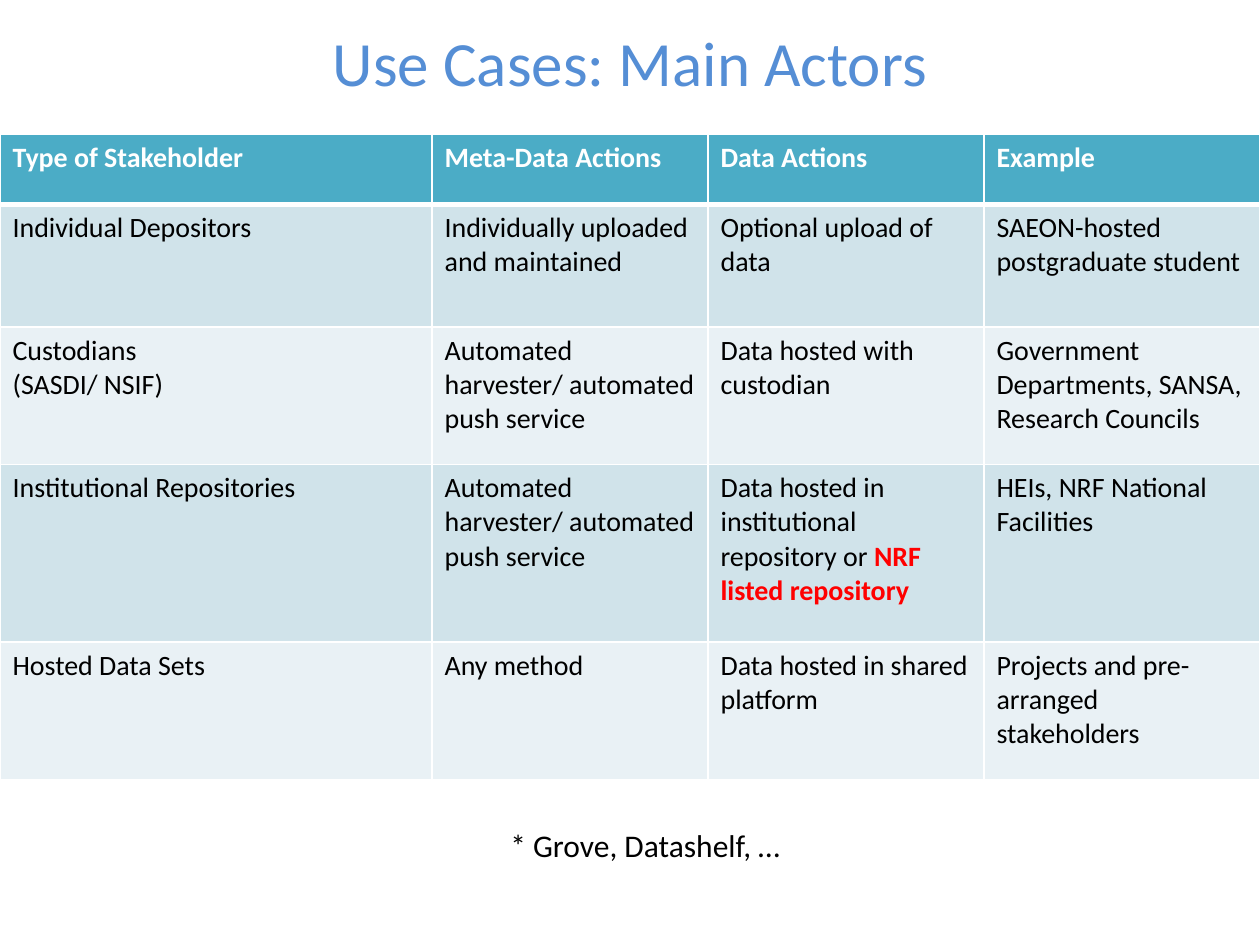
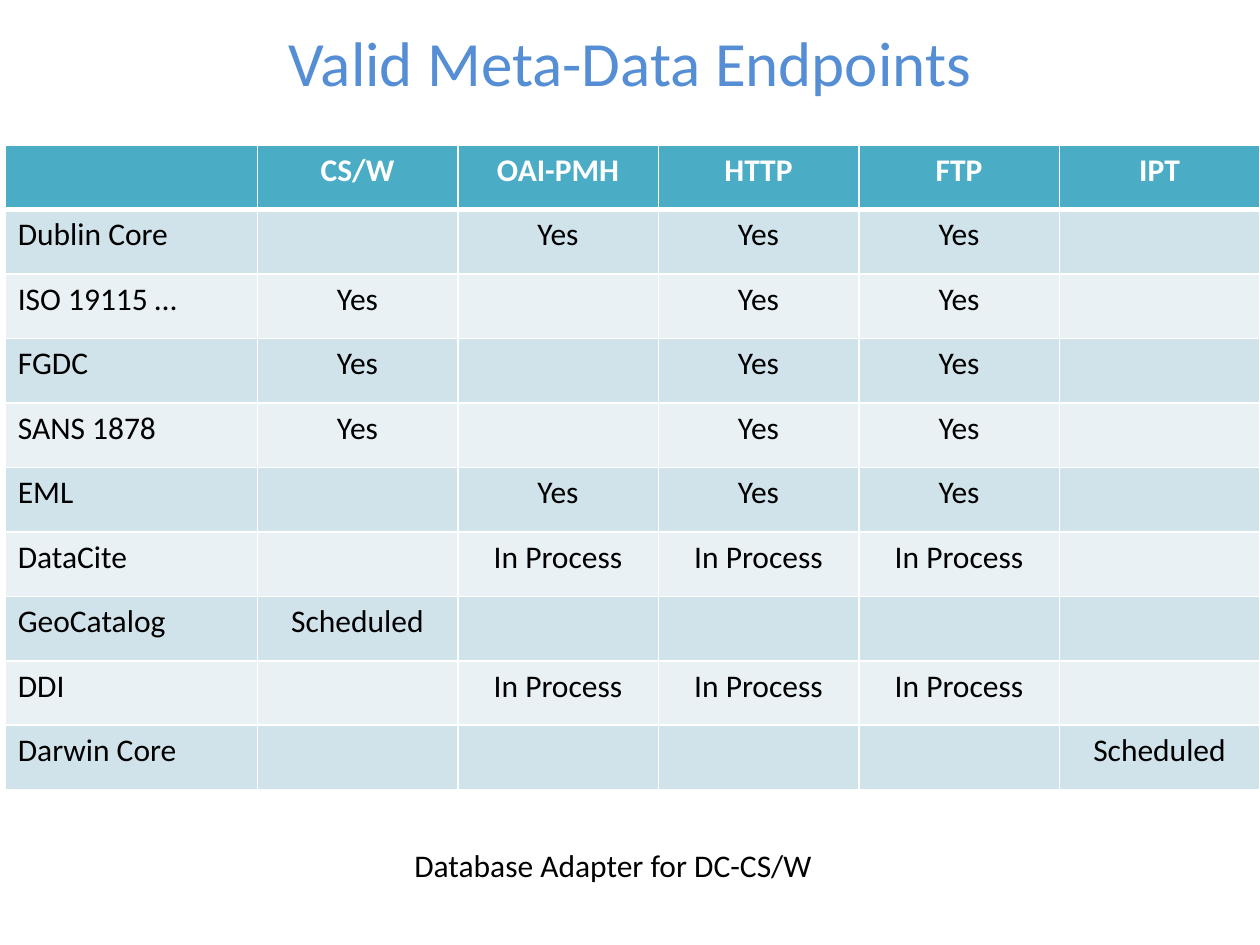
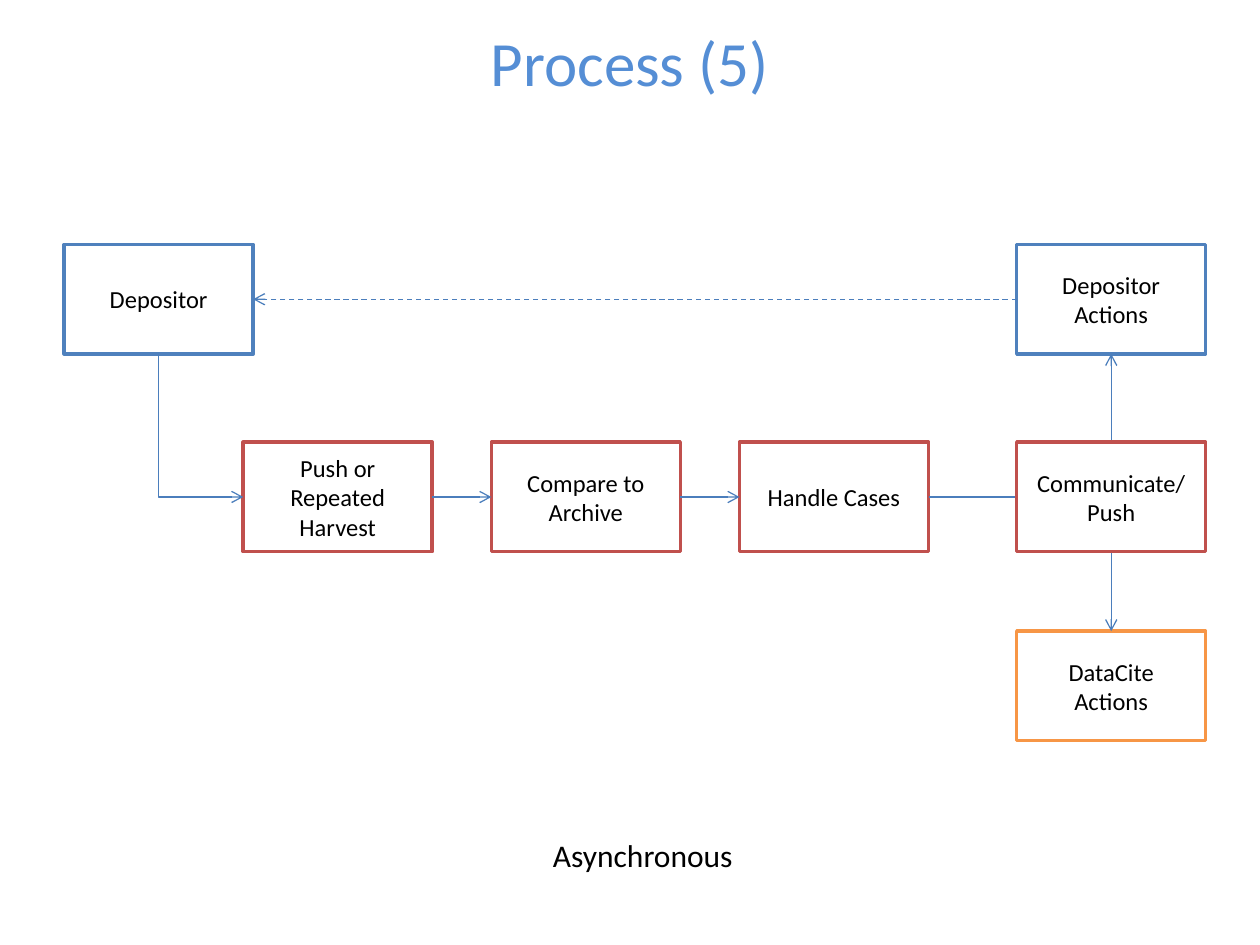
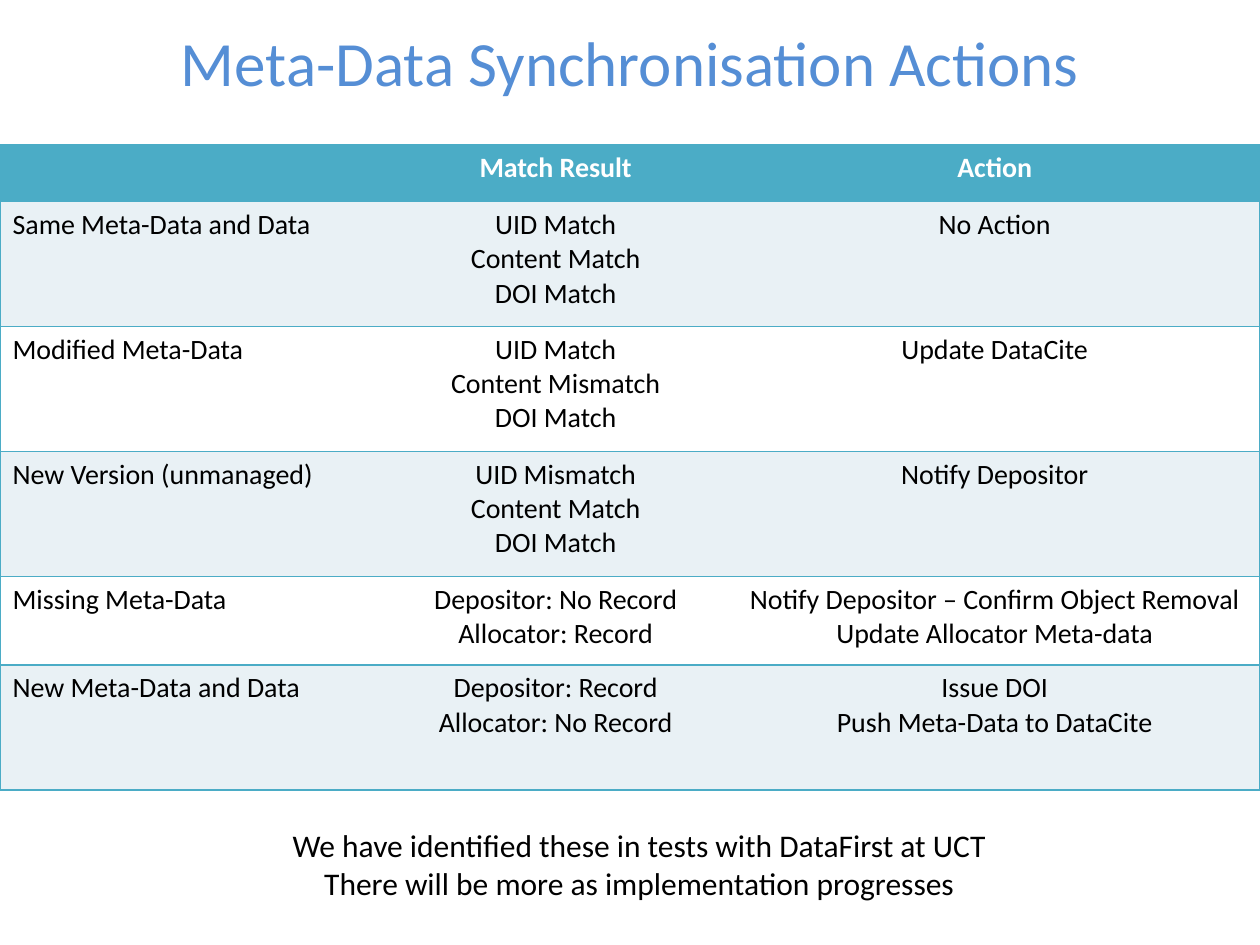
import pptx
import pptx.dml.color
import pptx.enum.dml
import pptx.enum.shapes
import pptx.enum.text
import pptx.oxml
import pptx.oxml.ns
import pptx.util

Pt = pptx.util.Pt
qn = pptx.oxml.ns.qn
ALIGN = pptx.enum.text.PP_ALIGN
FONT = "Calibri"
COLORS = {
    "title": "558ED5", "text": "000000", "white": "FFFFFF", "alert": "FF0000",
    "head": "4BACC6", "dark": "D0E3EA", "light": "E9F1F5",
    "blue": "4F81BD", "red": "C0504D", "orange": "F79646", "link": "4B7EBC",
}
BOX_W, BOX_H = 108, 62.6

ACTORS = [
    ["Type of Stakeholder", "Meta-Data Actions", "Data Actions", "Example"],
    ["Individual Depositors", "Individually uploaded and maintained",
     "Optional upload of data", "SAEON-hosted postgraduate student"],
    ["Custodians\n(SASDI/ NSIF)", "Automated harvester/ automated push service",
     "Data hosted with custodian",
     "Government Departments, SANSA, Research Councils"],
    ["Institutional Repositories", "Automated harvester/ automated push service",
     "Data hosted in institutional repository or |NRF listed repository|",
     "HEIs, NRF National Facilities"],
    ["Hosted Data Sets", "Any method", "Data hosted in shared platform",
     "Projects and pre-arranged stakeholders"],
]
YES, WIP, DUE = "Yes", "In Process", "Scheduled"
POINTS = [
    ["", "CS/W", "OAI-PMH", "HTTP", "FTP", "IPT"],
    ["Dublin Core", "", YES, YES, YES, ""],
    ["ISO 19115 …", YES, "", YES, YES, ""],
    ["FGDC", YES, "", YES, YES, ""],
    ["SANS 1878", YES, "", YES, YES, ""],
    ["EML", "", YES, YES, YES, ""],
    ["DataCite", "", WIP, WIP, WIP, ""],
    ["GeoCatalog", DUE, "", "", "", ""],
    ["DDI", "", WIP, WIP, WIP, ""],
    ["Darwin Core", "", "", "", "", DUE],
]
SYNC = [
    ["", "Match Result", "Action"],
    ["Same Meta-Data and Data", "UID Match\nContent Match\nDOI Match", "No Action"],
    ["Modified Meta-Data", "UID Match\nContent Mismatch\nDOI Match",
     "Update DataCite"],
    ["New Version (unmanaged)", "UID Mismatch\nContent Match\nDOI Match",
     "Notify Depositor"],
    ["Missing Meta-Data", "Depositor: No Record\nAllocator: Record",
     "Notify Depositor – Confirm Object Removal\nUpdate Allocator Meta-data"],
    ["New Meta-Data and Data", "Depositor: Record\nAllocator: No Record",
     "Issue DOI\nPush Meta-Data to DataCite"],
]


def rgb(name):
    """Return the named colour."""
    return pptx.dml.color.RGBColor.from_string(COLORS[name])


def write(frame, text, size, color="text", align=ALIGN.CENTER, bold=False):
    """Fill a frame, a paragraph per line, with |marked| parts in bold red."""
    for row, line in enumerate(text.split("\n")):
        para = frame.add_paragraph() if row else frame.paragraphs[0]
        para.alignment = align
        for pos, part in enumerate(line.split("|")):
            if part:
                run = para.add_run()
                run.text = part
                font = run.font
                font.name, font.size = FONT, Pt(size)
                font.bold = bold or pos % 2 == 1
                font.color.rgb = rgb("alert" if pos % 2 else color)


def add_text(slide, text, at, size=18, color="text", align=ALIGN.CENTER,
             wrap=True, fit=True):
    """Add a text box and return its frame."""
    frame = slide.shapes.add_textbox(*map(Pt, at)).text_frame
    frame.word_wrap = wrap
    if fit:
        frame.auto_size = pptx.enum.text.MSO_AUTO_SIZE.SHAPE_TO_FIT_TEXT
    write(frame, text, size, color, align)
    return frame


def add_page(deck, title):
    """Add a blank slide with the shared title."""
    slide = deck.slides.add_slide(deck.slide_layouts[6])
    frame = add_text(slide, title, (0, -0.7, 720, 72), 36, "title", fit=False)
    frame.vertical_anchor = pptx.enum.text.MSO_ANCHOR.MIDDLE
    return slide


def set_edges(cell, color, widths):
    """Draw the left, right, top and bottom edges; zero hides an edge."""
    props = cell._tc.get_or_add_tcPr()
    for pos, (side, width) in enumerate(zip("LRTB", widths)):
        line = props.makeelement(qn("a:ln" + side), {"w": str(Pt(width))})
        if width:
            fill = pptx.oxml.ns.qn("a:solidFill")
            tint = line.makeelement(qn("a:srgbClr"), {"val": COLORS[color]})
            solid = line.makeelement(fill, {})
            solid.append(tint)
            line.append(solid)
        else:
            line.append(line.makeelement(qn("a:noFill"), {}))
        props.insert(pos, line)


def add_grid(slide, data, at, cols, rows, size, bands, center=True, ruled=False):
    """Add a banded table, with a full grid or with ruled rows only."""
    shape = slide.shapes.add_table(len(rows), len(cols), *map(Pt, at),
                                   Pt(sum(cols)), Pt(sum(rows)))
    table = shape.table
    for col, width in zip(table.columns, cols):
        col.width = Pt(width)
    for row, height in zip(table.rows, rows):
        row.height = Pt(height)
    last = len(cols) - 1
    for r, line in enumerate(data):
        for c, text in enumerate(line):
            cell = table.cell(r, c)
            cell.fill.solid()
            cell.fill.fore_color.rgb = rgb(bands[(r - 1) % 2] if r else "head")
            align = ALIGN.CENTER if center and c else ALIGN.LEFT
            write(cell.text_frame, text, size, "text" if r else "white", align,
                  bold=not r)
            if ruled:
                set_edges(cell, "head", (int(c == 0), int(c == last), 1, 1))
            else:
                set_edges(cell, "white", (1, 1, 3 if r == 1 else 1, 1 if r else 3))


def add_box(slide, text, left, top, color):
    """Add an outlined step of the process."""
    kind = pptx.enum.shapes.MSO_SHAPE.RECTANGLE
    box = slide.shapes.add_shape(kind, *map(Pt, (left, top, BOX_W, BOX_H)))
    box.shadow.inherit = False
    box.fill.solid()
    box.fill.fore_color.rgb = rgb("white")
    box.line.color.rgb = rgb(color)
    box.line.width = Pt(2)
    box.text_frame.word_wrap = True
    box.text_frame.vertical_anchor = pptx.enum.text.MSO_ANCHOR.MIDDLE
    write(box.text_frame, text, 14)
    return box


def join(slide, start, out, end, into, dash=False):
    """Link two boxes by an elbow arrow, with one bend between crossing sides."""
    kind = pptx.enum.shapes.MSO_CONNECTOR.ELBOW
    link = slide.shapes.add_connector(kind, 0, 0, 0, 0)
    link.begin_connect(start, out)
    link.end_connect(end, into)
    link.line.color.rgb = rgb("link")
    link.line.width = Pt(0.75)
    if dash:
        link.line.dash_style = pptx.enum.dml.MSO_LINE.DASH
    props = link.element.spPr
    line = props.find(qn("a:ln"))
    line.append(line.makeelement(qn("a:tailEnd"), {"type": "arrow"}))
    props.append(props.makeelement(qn("a:effectLst"), {}))
    if out % 2 != into % 2:
        props.find(qn("a:prstGeom")).set("prst", "bentConnector2")
        if out == 2:
            turn(link, props.find(qn("a:xfrm")))


def turn(link, frame):
    """Make a one-bend link run down first and then right."""
    wide, high = link.width, link.height
    shift = (wide - high) // 2
    link.left, link.top = link.left + shift, link.top - shift
    link.width, link.height = high, wide
    frame.set("rot", "16200000")
    frame.set("flipH", "1")


def add_flow(slide):
    """Draw the process of boxes and arrows."""
    high, mid, low = 139.7, 252.7, 360.7
    first, right = 36.7, 581
    steps = ["Push or Repeated\nHarvest", "Compare to Archive", "Handle Cases"]
    push, check, handle = [add_box(slide, text, 139 + 141.8 * pos, mid, "red")
                           for pos, text in enumerate(steps)]
    acts = add_box(slide, "Depositor Actions", right, high, "blue")
    join(slide, handle, 3, acts, 2)
    join(slide, check, 3, handle, 1)
    join(slide, push, 3, check, 1)
    source = add_box(slide, "Depositor", first, high, "blue")
    join(slide, source, 2, push, 1)
    join(slide, acts, 1, source, 3, dash=True)
    cite = add_box(slide, "DataCite Actions", right, low, "orange")
    join(slide, handle, 3, cite, 0)
    add_box(slide, "Communicate/ Push", right, mid, "red")


def main():
    """Build the four slides."""
    deck = pptx.Presentation()
    deck.slide_width, deck.slide_height = Pt(720), Pt(540)

    page = add_page(deck, "Use Cases: Main Actors")
    add_grid(page, ACTORS, (0, 77), [246.9] + [157.7] * 3,
             [40, 70, 78.5, 101.5, 78.5], 16, ("dark", "light"), center=False)
    add_text(page, "* Grove, Datashelf, …", (178.6, 468.7, 380.2, 29))

    page = add_page(deck, "Valid Meta-Data Endpoints")
    add_grid(page, POINTS, (3, 83), [144] + [114.6] * 5, [36.85] * 10, 18,
             ("dark", "light"))
    add_text(page, "Database Adapter for DC-CS/W", (229.7, 479.7, 250.6, 29),
             align=ALIGN.LEFT, wrap=False)

    page = add_page(deck, "Process (5)")
    add_flow(page)
    add_text(page, "Asynchronous", (308.9, 474, 118.8, 29),
             align=ALIGN.LEFT, wrap=False)

    page = add_page(deck, "Meta-Data Synchronisation Actions")
    add_text(page, "We have identified these in tests with DataFirst at UCT\n"
             "There will be more as implementation progresses",
             (156.2, 468.7, 418.3, 51), wrap=False)
    add_grid(page, SYNC, (0, 82.8), [218.2, 198.7, 303.1],
             [32.4, 71.4, 71.4, 71.4, 50.6, 71.4], 16, ("light", "white"),
             ruled=True)
    deck.save("out.pptx")


if __name__ == "__main__":
    main()
